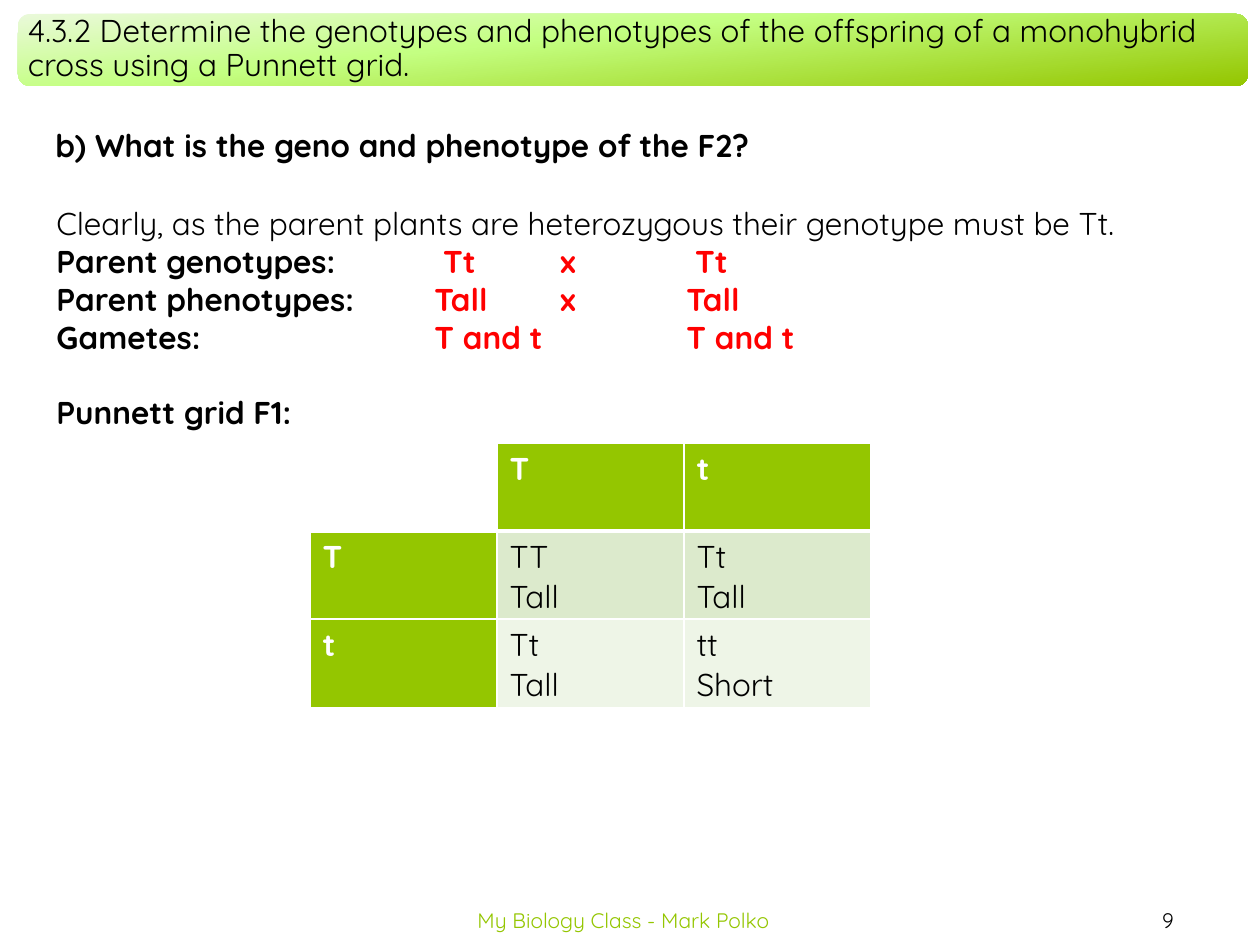
from copy import deepcopy

from lxml import etree
from pptx import Presentation
from pptx import util as u
from pptx.dml.color import RGBColor
from pptx.enum import shapes, text
from pptx.oxml import ns

PX = 914400 // 126
FONT = "Quicksand"
COLORS = {"black": "000000", "white": "FFFFFF", "red": "FF0000", "green": "94C600",
          "mint": "EAF9DA", "lime": "C4FF82", "band1": "DCEACC", "band2": "EEF5E7"}


def write(frame, paragraphs, size=18, color="black", bold=False, align="LEFT",
          anchor="TOP", inset=None, line=None, tabs=()):
    """Each paragraph is a list of (text, color) runs or a plain string."""
    frame.word_wrap = True
    frame.vertical_anchor = text.MSO_ANCHOR[anchor]
    if inset is not None:
        frame.margin_left = frame.margin_right = inset * PX
        frame.margin_top = frame.margin_bottom = inset * PX
    for i, runs in enumerate(paragraphs):
        para = frame.paragraphs[0] if i == 0 else frame.add_paragraph()
        para.alignment = text.PP_ALIGN[align]
        if line:
            para.line_spacing = line
        if tabs:
            stops = etree.SubElement(para._p.get_or_add_pPr(), ns.qn("a:tabLst"))
            for stop in tabs:
                etree.SubElement(stops, ns.qn("a:tab"), pos=str(stop * PX), algn="l")
        for words, shade in [(runs, color)] if isinstance(runs, str) else runs:
            run = para.add_run()
            run.text = words
            run.font.name, run.font.size, run.font.bold = FONT, u.Pt(size), bold
            run.font.color.rgb = RGBColor.from_string(COLORS[shade])


prs = Presentation()
prs.slide_width, prs.slide_height = 1260 * PX, 945 * PX
slide = prs.slides.add_slide(prs.slide_layouts[6])


def text_box(left, top, width, height):
    return slide.shapes.add_textbox(left * PX, top * PX, width * PX, height * PX).text_frame


# Footer
write(text_box(1076, 895, 184, 50), ["9"], size=12, align="CENTER", anchor="MIDDLE")
write(text_box(382, 895, 483, 50), ["My Biology Class - Mark Polko"], size=12,
      color="green", align="CENTER", anchor="MIDDLE")

# Title banner with a three-stop gradient
banner = slide.shapes.add_shape(shapes.MSO_SHAPE.ROUNDED_RECTANGLE,
                                18 * PX, 14 * PX, 1230 * PX, 72 * PX)
banner.shadow.inherit = False
banner.line.fill.background()
banner.fill.gradient()
banner.fill.gradient_angle = 360 - 84
stop_list = banner.fill._fill._gradFill.gsLst
stop_list.append(deepcopy(stop_list[-1]))
for stop, (position, shade) in zip(banner.fill.gradient_stops,
                                   [(0, "mint"), (0.4, "lime"), (1, "green")]):
    stop.position = position
    stop.color.rgb = RGBColor.from_string(COLORS[shade])
write(text_box(22, 17, 1224, 64),
      ["4.3.2 Determine the genotypes and phenotypes of the offspring of a "
       "monohybrid cross using a Punnett grid."],
      anchor="MIDDLE", inset=6, line=0.9)

# Question
write(text_box(43, 120, 922, 50), ["b) What is the geno and phenotype of the F2?"], bold=True)

# Working, with the two parents lined up on tab stops
working = text_box(44, 198, 1091, 240)
write(working, [
    "Clearly, as the parent plants are heterozygous their genotype must be Tt.",
    [("Parent genotypes:", "black"), ("\t Tt\tx\t Tt", "red")],
    [("Parent phenotypes:", "black"), ("\tTall\tx\tTall", "red")],
    [("Gametes:", "black"), ("\tT and t\t\tT and t", "red")],
    "Punnett grid F1:",
], bold=True, tabs=(378, 504, 630))
working.paragraphs[0].runs[0].font.bold = False
working.paragraphs[-1].space_before = u.Pt(21.6)

# Punnett grid
grid = [[[], ["T"], ["t"]],
        [["T"], ["TT", "Tall"], ["Tt", "Tall"]],
        [["t"], ["Tt", "Tall"], ["tt", "Short"]]]
punnett = slide.shapes.add_table(3, 3, 310 * PX, 443 * PX, 561 * PX, 264 * PX).table
for column in punnett.columns:
    column.width = 187 * PX
for row in punnett.rows:
    row.height = 88 * PX
for r, row in enumerate(grid):
    for c, lines in enumerate(row):
        cell = punnett.cell(r, c)
        heading = r == 0 or c == 0
        write(cell.text_frame, lines, color="white" if heading else "black", bold=heading)
        if lines:
            cell.fill.solid()
            shade = "green" if heading else f"band{r}"
            cell.fill.fore_color.rgb = RGBColor.from_string(COLORS[shade])
        else:
            cell.fill.background()
        for i, side in enumerate("LRTB"):
            thick = (r == 0 and side == "B") or (r == 1 and side == "T")
            border = etree.Element(ns.qn(f"a:ln{side}"), w=str(u.Pt(3 if thick else 1)))
            paint = etree.SubElement(border, ns.qn("a:solidFill"))
            etree.SubElement(paint, ns.qn("a:srgbClr"), val=COLORS["white"])
            cell._tc.get_or_add_tcPr().insert(i, border)

prs.save("out.pptx")
